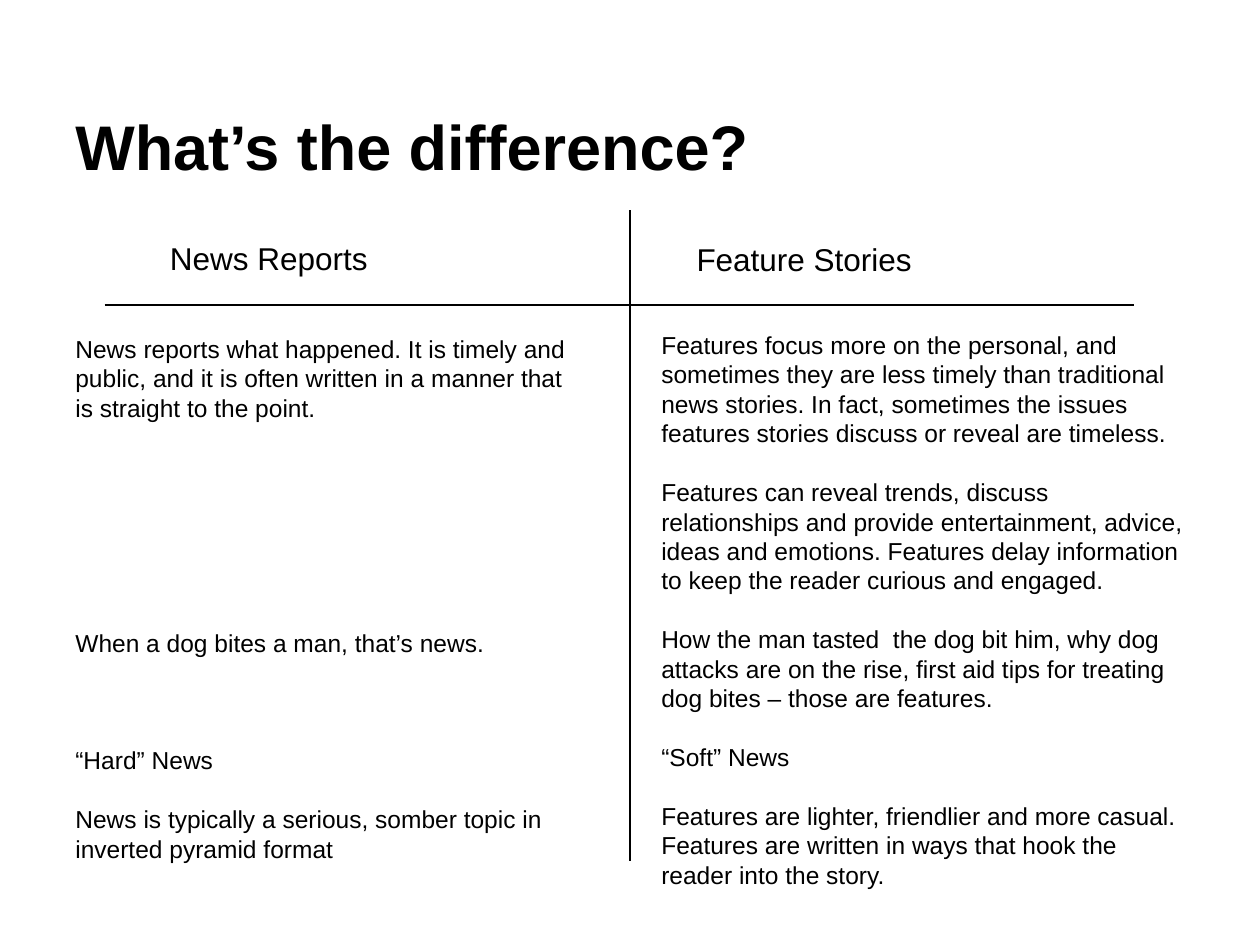
from dataclasses import dataclass

from lxml.etree import SubElement
from pptx import Presentation
from pptx.dml.color import RGBColor
from pptx.enum.shapes import MSO_CONNECTOR as Connector
from pptx.enum.text import MSO_ANCHOR as Anchor
from pptx.oxml.ns import qn
from pptx.util import Inches, Pt

BLACK = "000000"
FONT = "Arial"
LINE_RATIO = 1.2


@dataclass(frozen=True)
class Entry:
    text: str
    blank_lines: int = 0


@dataclass(frozen=True)
class Block:
    left: float
    top: float
    width: float
    height: float
    size: int
    entries: tuple[Entry, ...]


@dataclass(frozen=True)
class Rule:
    x1: float
    y1: float
    x2: float
    y2: float


RULES = (Rule(0.83, 2.42, 9, 2.42), Rule(5, 1.67, 5, 6.83))

BLOCKS = (
    Block(1.25, 1.85, 2.83, 0.4, 18, (Entry("News Reports"),)),
    Block(5.43, 1.86, 2.83, 0.4, 18, (Entry("Feature Stories"),)),
    Block(0.5, 2.6, 4.17, 4.34, 14, (
        Entry("News reports what happened. It is timely and public, and it is "
              "often written in a manner that is straight to the point."),
        Entry("When a dog bites a man, that’s news.", 7),
        Entry("“Hard” News", 3),
        Entry("News is typically a serious, somber topic in inverted pyramid format", 1),
    )),
    Block(5.15, 2.57, 4.35, 4.81, 14, (
        Entry("Features focus more on the personal, and sometimes they are less "
              "timely than traditional news stories. In fact, sometimes the issues "
              "features stories discuss or reveal are timeless."),
        Entry("Features can reveal trends, discuss relationships and provide "
              "entertainment, advice, ideas and emotions. Features delay "
              "information to keep the reader curious and engaged.", 1),
        Entry("How the man tasted  the dog bit him, why dog attacks are on the "
              "rise, first aid tips for treating dog bites – those are features.", 1),
        Entry("“Soft” News", 1),
        Entry("Features are lighter, friendlier and more casual. Features are "
              "written in ways that hook the reader into the story.", 1),
    )),
)


def color(value: str) -> RGBColor:
    return RGBColor.from_string(value)


def set_font(paragraph, size: int, bold: bool = False) -> None:
    font = paragraph.font
    font.name = FONT
    font.size = Pt(size)
    font.bold = bold
    font.color.rgb = color(BLACK)


def add_frame(slide, left: float, top: float, width: float, height: float):
    shape = slide.shapes.add_textbox(
        Inches(left), Inches(top), Inches(width), Inches(height))
    shape.text_frame.word_wrap = True
    return shape.text_frame


def add_title(slide, text: str) -> None:
    frame = add_frame(slide, 0.5, 0.3, 9, 1.25)
    frame.vertical_anchor = Anchor.BOTTOM
    frame.margin_top = frame.margin_bottom = Inches(0.1)
    paragraph = frame.paragraphs[0]
    paragraph.text = text
    set_font(paragraph, 36, bold=True)


def add_block(slide, block: Block) -> None:
    frame = add_frame(slide, block.left, block.top, block.width, block.height)
    line_height = block.size * LINE_RATIO
    for index, entry in enumerate(block.entries):
        paragraph = frame.add_paragraph() if index else frame.paragraphs[0]
        paragraph.text = entry.text
        paragraph.line_spacing = Pt(line_height)
        paragraph.space_before = Pt(entry.blank_lines * line_height)
        set_font(paragraph, block.size)


def add_rule(slide, rule: Rule) -> None:
    connector = slide.shapes.add_connector(
        Connector.STRAIGHT, Inches(rule.x1), Inches(rule.y1),
        Inches(rule.x2), Inches(rule.y2))
    connector.line.color.rgb = color(BLACK)
    connector.line.width = Pt(0.75)
    SubElement(connector._element.spPr, qn("a:effectLst"))


def main() -> None:
    presentation = Presentation()
    presentation.slide_width = Inches(10)
    presentation.slide_height = Inches(7.5)
    slide = presentation.slides.add_slide(presentation.slide_layouts[6])
    add_title(slide, "What’s the difference?")
    for rule in RULES:
        add_rule(slide, rule)
    for block in BLOCKS:
        add_block(slide, block)
    presentation.save("out.pptx")


if __name__ == "__main__":
    main()
